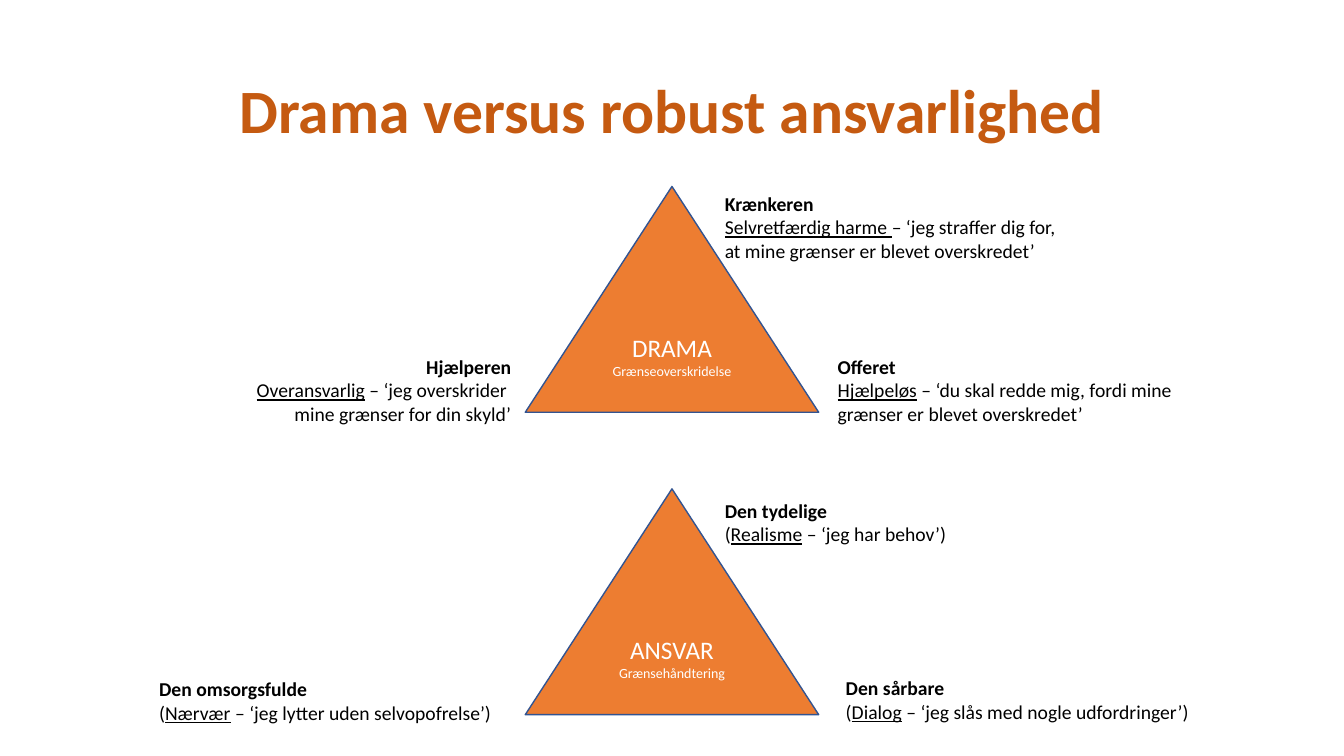
from pptx import Presentation
from pptx.dml.color import RGBColor
from pptx.enum.shapes import MSO_SHAPE
from pptx.enum.text import MSO_ANCHOR, MSO_AUTO_SIZE, PP_ALIGN
from pptx.util import Inches, Pt


def style(paragraph, size, color, align, bold=False):
    paragraph.alignment = align
    font = paragraph.font
    font.name, font.size, font.bold = "Calibri", Pt(size), bold
    font.color.rgb = RGBColor.from_string(color)


prs = Presentation()
prs.slide_width, prs.slide_height = Inches(13.33), Inches(7.5)
slide = prs.slides.add_slide(prs.slide_layouts[5])

title = slide.shapes.title
title.left, title.top = Inches(0.92), Inches(0.4)
title.width, title.height = Inches(11.5), Inches(1.45)
title.text_frame.text = "Drama versus robust ansvarlighed"
title.text_frame.auto_size = MSO_AUTO_SIZE.NONE
title.text_frame.vertical_anchor = MSO_ANCHOR.MIDDLE
heading = title.text_frame.paragraphs[0]
style(heading, 44, "C55A11", PP_ALIGN.CENTER, bold=True)
heading.line_spacing = 0.9

triangles = [
    (1.85, "DRAMA", "Grænseoverskridelse"),
    (4.85, "ANSVAR", "Grænsehåndtering"),
]
for top, theme, subtitle in triangles:
    triangle = slide.shapes.add_shape(
        MSO_SHAPE.ISOSCELES_TRIANGLE, Inches(5.21), Inches(top), Inches(2.91), Inches(2.24))
    triangle.shadow.inherit = False
    triangle.fill.solid()
    triangle.fill.fore_color.rgb = RGBColor.from_string("ED7D31")
    triangle.line.color.rgb = RGBColor.from_string("325491")
    triangle.line.width = Pt(1)
    frame = triangle.text_frame
    frame.vertical_anchor = MSO_ANCHOR.MIDDLE
    frame.text = f"{theme}\n{subtitle}"
    for paragraph, size in zip(frame.paragraphs, (18, 10)):
        style(paragraph, size, "FFFFFF", PP_ALIGN.CENTER)

# Role, then lines of text; the part between underscores is underlined
roles = [
    (7.09, 1.85, 3.67, 0.81, PP_ALIGN.LEFT, "Krænkeren",
     ["_Selvretfærdig harme _– ‘jeg straffer dig for, at mine grænser er blevet overskredet’"]),
    (8.21, 3.47, 3.67, 0.81, PP_ALIGN.LEFT, "Offeret",
     ["_Hjælpeløs_ – ‘du skal redde mig, fordi mine grænser er blevet overskredet’"]),
    (1.22, 3.47, 3.95, 0.81, PP_ALIGN.RIGHT, "Hjælperen",
     ["_Overansvarlig_ – ‘jeg overskrider ", "mine grænser for din skyld’"]),
    (7.09, 4.9, 2.56, 0.57, PP_ALIGN.LEFT, "Den tydelige",
     ["(_Realisme_ – ‘jeg har behov’)"]),
    (8.29, 6.66, 3.67, 0.57, PP_ALIGN.LEFT, "Den sårbare",
     ["(_Dialog_ – ‘jeg slås med nogle udfordringer’)"]),
    (1.48, 6.67, 3.56, 0.57, PP_ALIGN.LEFT, "Den omsorgsfulde",
     ["(_Nærvær_ – ‘jeg lytter uden selvopofrelse’)"]),
]
for left, top, width, height, align, role, lines in roles:
    frame = slide.shapes.add_textbox(
        Inches(left), Inches(top), Inches(width), Inches(height)).text_frame
    frame.word_wrap = True
    frame.auto_size = MSO_AUTO_SIZE.SHAPE_TO_FIT_TEXT
    frame.text = role
    style(frame.paragraphs[0], 14, "000000", align, bold=True)
    for line in lines:
        paragraph = frame.add_paragraph()
        style(paragraph, 14, "000000", align)
        for index, part in enumerate(line.split("_")):
            if part:
                run = paragraph.add_run()
                run.text = part
                run.font.underline = index == 1

prs.save("out.pptx")
